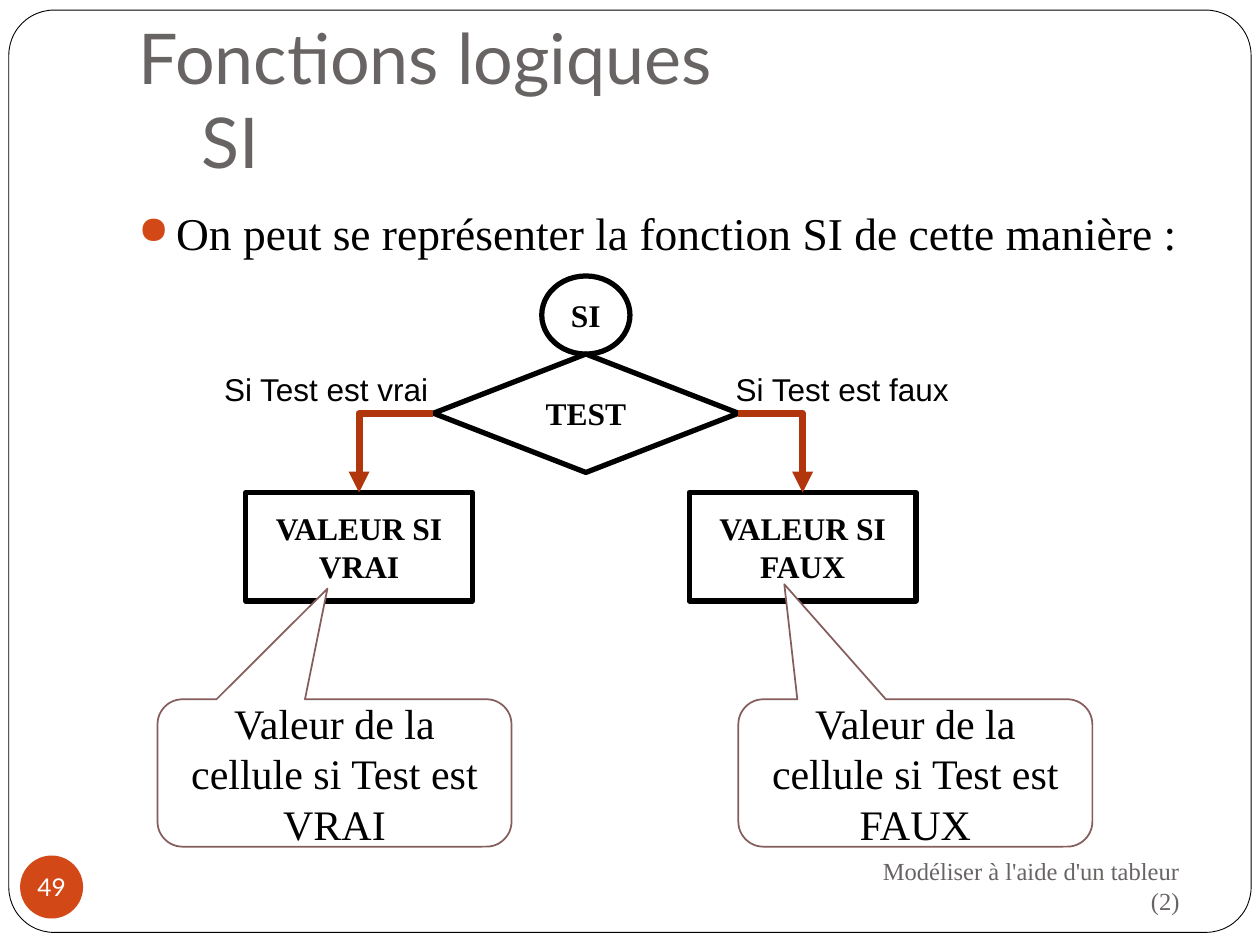
import pptx
import pptx.util
import pptx.dml.color
import pptx.enum.shapes
import pptx.enum.text
import pptx.oxml
import pptx.oxml.ns
from lxml import etree

Pt = pptx.util.Pt
KIND = pptx.enum.shapes.MSO_SHAPE
ALIGN = pptx.enum.text.PP_ALIGN
ANCHOR = pptx.enum.text.MSO_ANCHOR
qn = pptx.oxml.ns.qn

SERIF = "Times New Roman"
INK, WHITE, GREY, RUST = "000000", "FFFFFF", "696464", "D34817"
BOLD = {"name": SERIF, "size": Pt(18), "bold": True}
NOTE = {"name": SERIF, "size": Pt(24)}
TAG = {"name": "Arial", "size": Pt(18)}

# The grid: 100 columns by 75 rows
COLS, ROWS = 100, 75
deck = pptx.Presentation()
deck.slide_width, deck.slide_height = pptx.util.Inches(10), pptx.util.Inches(7.5)
slide = deck.slides.add_slide(deck.slide_layouts[5])


def grid(box):
    """Turn (column, row, columns, rows) into lengths."""
    wide, high = deck.slide_width / COLS, deck.slide_height / ROWS
    return [round(n * unit) for n, unit in zip(box, (wide, high, wide, high))]


def inner(box, dx, dy, wide, high):
    """A part of a box, given from the top left corner of that box."""
    return box[0] + dx, box[1] + dy, wide, high


def shade(color, code):
    color.rgb = pptx.dml.color.RGBColor.from_string(code)


def apply(item, form):
    for key, value in form.items():
        setattr(item, key, value)


def write(shape, words, font, code=INK, align=ALIGN.CENTER, **frame):
    text = shape.text_frame
    apply(text, {"word_wrap": True, "vertical_anchor": ANCHOR.MIDDLE, **frame})
    text.text = words
    para = text.paragraphs[0]
    para.alignment = align
    for run in para.runs:
        apply(run.font, font)
        shade(run.font.color, code)
    return para


def draw(kind, box, fill=None, line=None, width=1, adjust=()):
    shape = slide.shapes.add_shape(kind, *grid(box))
    shape.shadow.inherit = False
    for i, value in enumerate(adjust):
        shape.adjustments[i] = value
    if fill:
        shape.fill.solid()
        shade(shape.fill.fore_color, fill)
    else:
        shape.fill.background()
    if line:
        shade(shape.line.color, line)
        shape.line.width = Pt(width)
    else:
        shape.line.fill.background()
    return shape


def label(box, words, font, **form):
    return write(slide.shapes.add_textbox(*grid(box)), words, font, **form)


def border(box):
    shape = draw(KIND.ROUNDED_RECTANGLE, box, WHITE, INK, 0.5, [0.049])
    slide.shapes._spTree.insert(2, shape._element)  # behind the title


def head(box):
    title = slide.shapes.title
    apply(title, dict(zip(("left", "top", "width", "height"), grid(box))))
    write(title, "Fonctions logiques\v\tSI", {"name": "Lato", "size": Pt(40)}, GREY,
          ALIGN.LEFT, vertical_anchor=ANCHOR.BOTTOM, margin_bottom=Pt(7.2),
          auto_size=pptx.enum.text.MSO_AUTO_SIZE.NONE)


def body(box):
    para = label(box, "On peut se représenter la fonction SI de cette manière :",
                 {"name": SERIF, "size": Pt(26)}, align=ALIGN.LEFT,
                 vertical_anchor=ANCHOR.TOP)
    para.space_before = Pt(5.8)
    props = para._p.get_or_add_pPr()
    props.set("marL", str(Pt(21.6)))
    props.set("indent", str(-Pt(21.6)))
    color = etree.SubElement(props, qn("a:buClr"))
    etree.SubElement(color, qn("a:srgbClr"), val=RUST)
    etree.SubElement(props, qn("a:buSzPct"), val="85000")
    etree.SubElement(props, qn("a:buChar"), char="●")


def arrow(start, side, goal):
    """A one-bend arrow from a side of the test to the top of a value."""
    line = slide.shapes.add_connector(pptx.enum.shapes.MSO_CONNECTOR.ELBOW, 0, 0, 0, 0)
    line.begin_connect(start, side)
    line.end_connect(goal, 0)
    shade(line.line.color, "B1360B")
    line.line.width = Pt(4)
    props = line._element.spPr
    props.find(qn("a:prstGeom")).set("prst", "bentConnector2")
    etree.SubElement(props.find(qn("a:ln")), qn("a:tailEnd"), type="triangle")
    etree.SubElement(props, qn("a:effectLst"))


def flow(box):
    # Start and test
    test = draw(KIND.DIAMOND, inner(box, 14.9, 6.2, 24.2, 9.4), line=INK, width=3)
    write(test, "TEST", BOLD)
    start = draw(KIND.FLOWCHART_CONNECTOR, inner(box, 23.5, 0, 7, 6.2), line=INK, width=3)
    write(start, "SI", BOLD)
    # Branches: word, side of the test, column of the value, label place
    for word, side, col, tag, wide in (("vrai", 1, 0, -2.7, 18.4),
                                       ("faux", 3, 35.2, 37.9, 19.1)):
        value = draw(KIND.RECTANGLE, inner(box, col, 17.2, 18, 8.6), line=INK, width=3)
        write(value, f"VALEUR SI {word.upper()}", BOLD)
        arrow(test, side, value)
        label(inner(box, tag, 7, wide, 4), f"Si Test est {word}", TAG,
              align=ALIGN.LEFT, vertical_anchor=ANCHOR.TOP, word_wrap=False)


def notes(box):
    # Callouts: word, column, tip of the pointer
    for word, col, tip in (("VRAI", 0, (-0.02, -1.25)), ("FAUX", 46.1, (-0.37, -1.28))):
        note = draw(KIND.ROUNDED_RECTANGULAR_CALLOUT, inner(box, col, 0, 28.1, box[3]),
                    WHITE, "855D5D", 1, [*tip, 0.17])
        write(note, f"Valeur de la cellule si Test est {word}", NOTE)


def foot(box):
    label(inner(box, 65.9, 0, 27.1, box[3]), "Modéliser à l'aide d'un tableur (2)",
          {"name": SERIF, "size": Pt(14)}, code=GREY, align=ALIGN.RIGHT)
    page = draw(KIND.OVAL, inner(box, 0, 0.2, 5, 5), RUST)
    sides = ("left", "top", "right", "bottom")
    write(page, "49", {"name": "Lato", "size": Pt(14)}, WHITE, word_wrap=False,
          **{f"margin_{side}": 0 for side in sides})


border((0.7, 0.8, 98.6, 73.2))
head((10, 3, 85, 12.5))
body((10, 15.8, 85, 50))
flow((19.5, 21.9, 53.2, 25.8))
notes((12.5, 55.5, 74.2, 11.7))
foot((1.6, 67.7, 93, 5.2))
deck.save("out.pptx")
